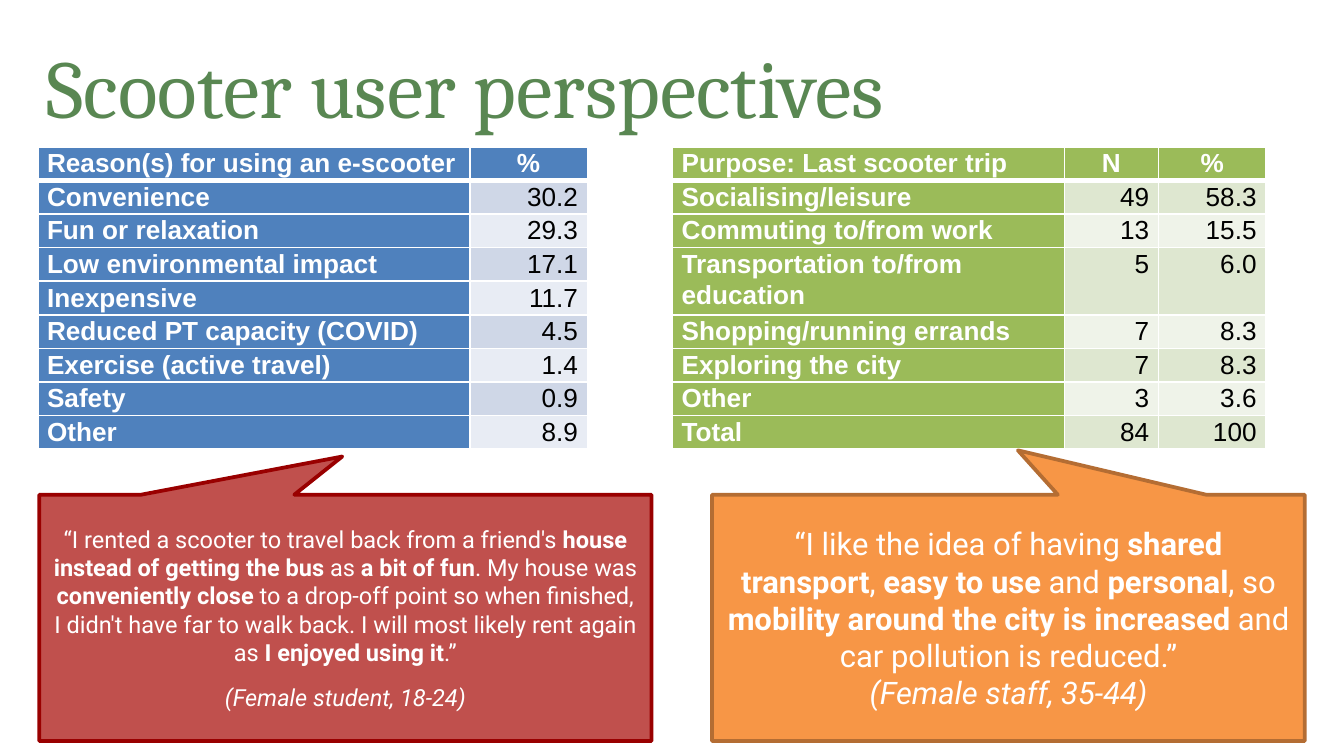
from dataclasses import dataclass

from lxml import etree
from pptx import Presentation
from pptx.dml.color import RGBColor
from pptx.enum.shapes import MSO_SHAPE
from pptx.enum.text import MSO_ANCHOR, PP_ALIGN
from pptx.oxml.ns import qn
from pptx.util import Pt

LEFT, CENTER, RIGHT = PP_ALIGN.LEFT, PP_ALIGN.CENTER, PP_ALIGN.RIGHT
TOP, MIDDLE = MSO_ANCHOR.TOP, MSO_ANCHOR.MIDDLE
CALLOUT = MSO_SHAPE.RECTANGULAR_CALLOUT


@dataclass(frozen=True)
class Theme:
    title_font: str = "Cambria"
    table_font: str = "Arial"
    quote_font: str = "Roboto"
    title_size: float = 44
    table_size: float = 14
    small_quote_size: float = 12.6
    large_quote_size: float = 16.6
    title: str = "598752"
    white: str = "FFFFFF"
    black: str = "000000"
    # Each table palette is: heading, odd body rows, even body rows
    blue: tuple = ("4F81BD", "CFD7E7", "E8ECF4")
    green: tuple = ("9BBB59", "DEE7D0", "EFF3E9")
    # Each callout palette is: fill, outline
    red: tuple = ("C0504D", "990000")
    orange: tuple = ("F79646", "B46D33")


THEME = Theme()

REASONS = [
    ("Reason(s) for using an e-scooter", "%"),
    ("Convenience", "30.2"),
    ("Fun or relaxation", "29.3"),
    ("Low environmental impact", "17.1"),
    ("Inexpensive", "11.7"),
    ("Reduced PT capacity (COVID)", "4.5"),
    ("Exercise (active travel)", "1.4"),
    ("Safety", "0.9"),
    ("Other", "8.9"),
]
PURPOSES = [
    ("Purpose: Last scooter trip", "N", "%"),
    ("Socialising/leisure", "49", "58.3"),
    ("Commuting to/from work", "13", "15.5"),
    ("Transportation to/from education", "5", "6.0"),
    ("Shopping/running errands", "7", "8.3"),
    ("Exploring the city", "7", "8.3"),
    ("Other", "3", "3.6"),
    ("Total", "84", "100"),
]
# Quote segments alternate between regular and bold
STUDENT_QUOTE = [
    "“I rented a scooter to travel back from a friend's ",
    "house instead of getting the bus ", "as ", "a bit of fun",
    ". My house was ", "conveniently close ",
    "to a drop-off point so when finished, I didn't have far to walk back. "
    "I will most likely rent again as ",
    "I enjoyed using it", ".”",
]
STAFF_QUOTE = [
    "“I like the idea of having ", "shared transport", ", ", "easy to use ",
    "and ", "personal", ", so ", "mobility around the city is increased",
    " and car pollution is reduced.”",
]


def style_font(font, name, size, color, bold=False, italic=False):
    font.name, font.size = name, Pt(size)
    font.bold, font.italic = bold, italic
    font.color.rgb = RGBColor.from_string(color)


def set_margins(target, horizontal, vertical):
    target.margin_left = target.margin_right = Pt(horizontal)
    target.margin_top = target.margin_bottom = Pt(vertical)


def add_title(slide, box, text):
    frame = slide.shapes.add_textbox(*map(Pt, box)).text_frame
    frame.word_wrap = True
    frame.vertical_anchor = TOP
    set_margins(frame, 0, 0)
    frame.text = text
    paragraph = frame.paragraphs[0]
    paragraph.line_spacing = 1.09
    style_font(paragraph.runs[0].font, THEME.title_font, THEME.title_size, THEME.title)


def set_borders(cell, bottom_width):
    properties = cell._tc.get_or_add_tcPr()
    for tag, width in (("lnL", 1), ("lnR", 1), ("lnT", 1), ("lnB", bottom_width)):
        line = etree.SubElement(properties, qn(f"a:{tag}"), w=str(Pt(width)))
        fill = etree.SubElement(line, qn("a:solidFill"))
        etree.SubElement(fill, qn("a:srgbClr"), val=THEME.white)


def add_data_table(slide, box, rows, widths, palette):
    """Place a table with a solid heading row and label column, and banded values."""
    heading, odd, even = palette
    frame = slide.shapes.add_table(len(rows), len(widths), *map(Pt, box))
    table = frame.table
    for column, width in zip(table.columns, widths):
        column.width = Pt(width)
    for row_index, values in enumerate(rows):
        table.rows[row_index].height = Pt(box[3] / len(rows))
        is_header = row_index == 0
        for column_index, value in enumerate(values):
            is_label = column_index == 0
            is_heading = is_header or is_label
            cell = table.cell(row_index, column_index)
            set_margins(cell, 5, 0)
            set_borders(cell, 3 if is_header else 1)
            band = odd if row_index % 2 else even
            cell.fill.solid()
            cell.fill.fore_color.rgb = RGBColor.from_string(heading if is_heading else band)
            cell.text_frame.text = value
            paragraph = cell.text_frame.paragraphs[0]
            paragraph.line_spacing = 1.07
            paragraph.alignment = LEFT if is_label else CENTER if is_header else RIGHT
            style_font(paragraph.runs[0].font, THEME.table_font, THEME.table_size,
                       THEME.white if is_heading else THEME.black, bold=is_heading)


def add_quote(slide, box, segments, speaker, size, palette, pointer,
              speaker_gap=0, speaker_spacing=1.0):
    """Place a callout; pointer is the tip's offset from the centre, as box fractions."""
    fill, outline = palette
    shape = slide.shapes.add_shape(CALLOUT, *map(Pt, box))
    shape.shadow.inherit = False
    for index, offset in enumerate(pointer):
        shape.adjustments[index] = offset
    shape.fill.solid()
    shape.fill.fore_color.rgb = RGBColor.from_string(fill)
    shape.line.color.rgb = RGBColor.from_string(outline)
    shape.line.width = Pt(2)

    frame = shape.text_frame
    frame.word_wrap = True
    frame.vertical_anchor = MIDDLE
    set_margins(frame, 7.2, 3.6)
    quote = frame.paragraphs[0]
    quote.alignment = CENTER
    for index, segment in enumerate(segments):
        run = quote.add_run()
        run.text = segment
        style_font(run.font, THEME.quote_font, size, THEME.white, bold=index % 2 == 1)
    credit = frame.add_paragraph()
    credit.text = speaker
    credit.alignment = CENTER
    credit.space_before = Pt(speaker_gap)
    credit.line_spacing = speaker_spacing
    style_font(credit.runs[0].font, THEME.quote_font, size, THEME.white, italic=True)


def main():
    presentation = Presentation()
    presentation.slide_width, presentation.slide_height = Pt(720), Pt(405)
    slide = presentation.slides.add_slide(presentation.slide_layouts[6])

    add_title(slide, (25, 15, 525, 80.6), "Scooter user perspectives")

    table_top, row_height = 78.7, 15
    for left, rows, widths, palette in (
        (20.2, REASONS, (231.5, 63), THEME.blue),
        (360.2, PURPOSES, (210, 50.4, 57.6), THEME.green),
    ):
        box = (left, table_top, sum(widths), row_height * len(rows))
        add_data_table(slide, box, rows, widths, palette)

    quote_top, quote_height = 265, 132
    add_quote(slide, (21, quote_top, 328, quote_height), STUDENT_QUOTE,
              "(Female student, 18-24)", THEME.small_quote_size, THEME.red,
              (-0.005, -0.655), speaker_gap=12, speaker_spacing=0.8)
    add_quote(slide, (381.5, quote_top, 317.5, quote_height), STAFF_QUOTE,
              "(Female staff, 35-44)", THEME.large_quote_size, THEME.orange,
              (0.016, -0.68))

    presentation.save("out.pptx")


if __name__ == "__main__":
    main()
